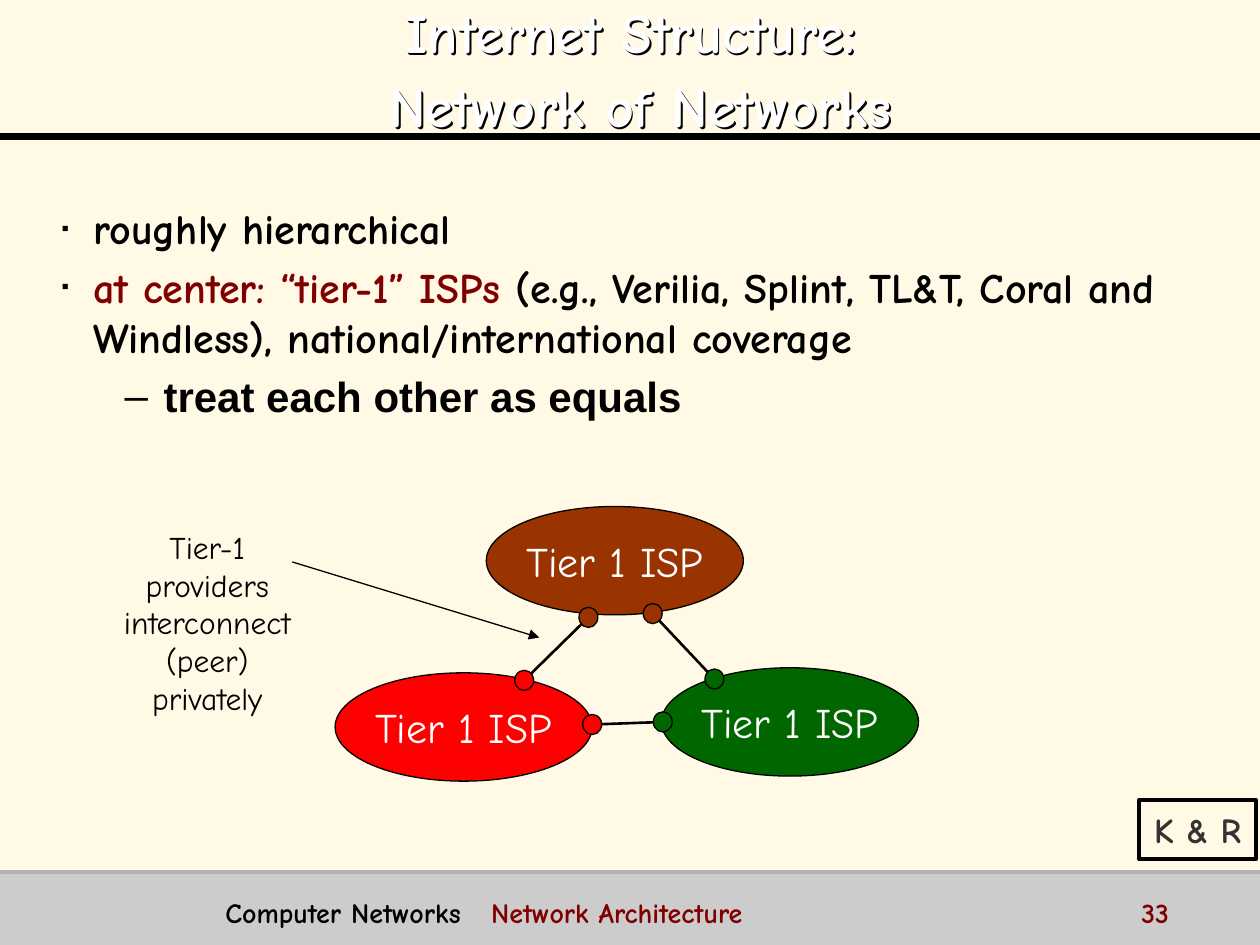
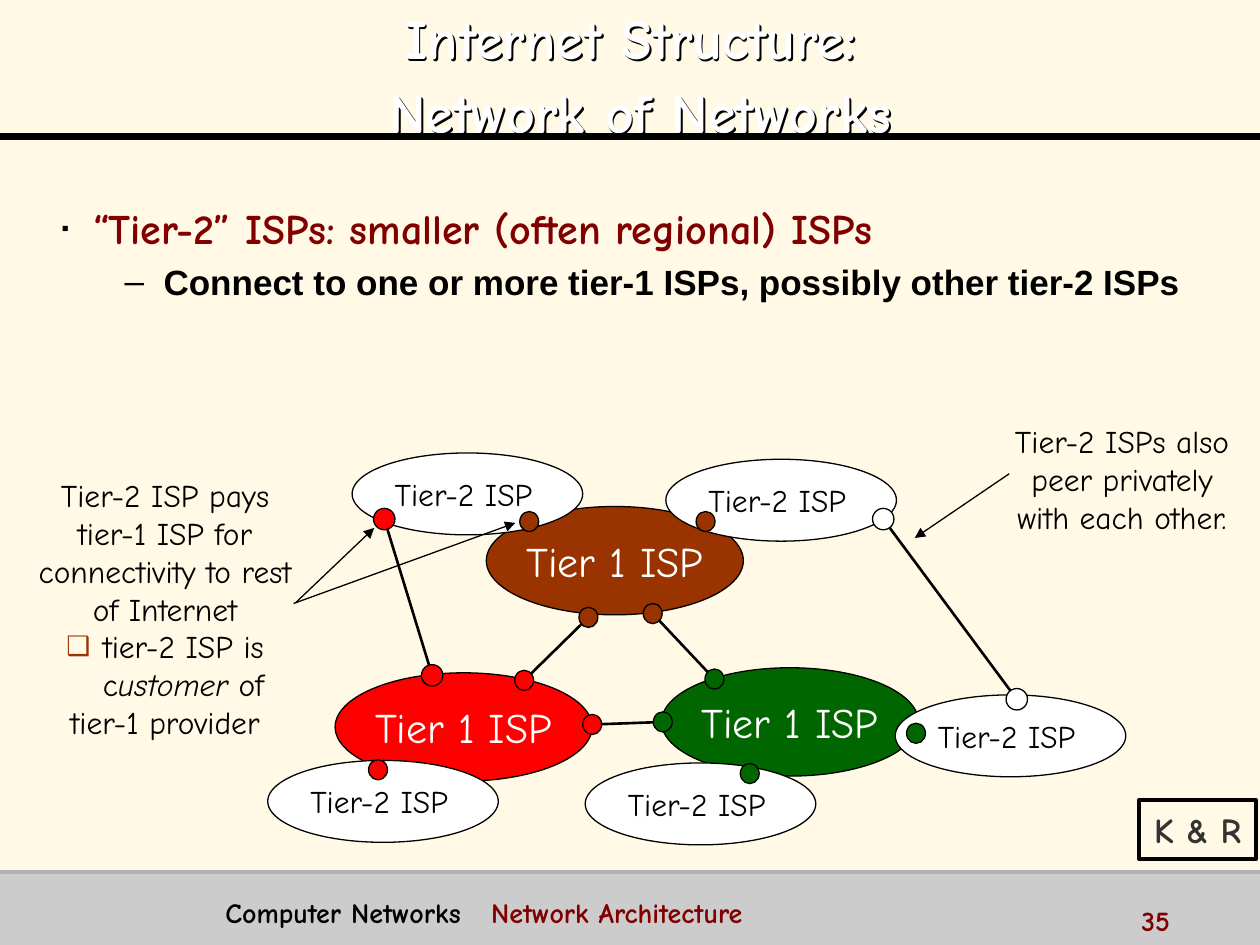
from lxml import etree
from pptx import Presentation, util as u
from pptx.dml.color import RGBColor
from pptx.enum import shapes, text
from pptx.oxml import ns

# Shared look
CREAM = RGBColor(0xFF, 0xF9, 0xE6)
GREY = RGBColor(0xCC, 0xCC, 0xCC)
RULE_GREY = RGBColor(0xB2, 0xB2, 0xB2)
DARK_GREY = RGBColor(0x33, 0x33, 0x33)
BLACK = RGBColor(0, 0, 0)
WHITE = RGBColor(0xFF, 0xFF, 0xFF)
MAROON = RGBColor(0x80, 0, 0)
RED = RGBColor(0xFF, 0, 0)
BROWN = RGBColor(0x99, 0x33, 0)
GREEN = RGBColor(0, 0x66, 0)
COMIC, SANS = "Comic Neue", "Arial"
WIDTH, HEIGHT = 10, 7.5
TITLE_RULE, FOOTER_TOP = 1.08, 6.92
TITLE_LINES = ["Internet Structure:", " Network of Networks"]
FOOTER = [("Computer Networks", BLACK), ("\tNetwork Architecture", MAROON)]
SOURCE = "K & R"

# Bullet levels: sign, sign size in percent, left margin, hanging indent, font
LEVELS = [("▪", 50, 0.25, 0.25, COMIC), ("–", 100, 0.81, 0.31, SANS)]

# Tier-1 core: clouds and ports as (centre x, centre y, colour), links as port pairs
TIER1_SIZE, TIER2_SIZE = (2.04, 0.86), (1.83, 0.65)
PORT_SIZE, WIDE_PORT_SIZE = (0.15, 0.16), (0.17, 0.17)
TIER1_CLOUDS = [(3.68, 5.77, RED), (4.88, 4.45, BROWN), (6.27, 5.73, GREEN)]
CORE_LINKS = [
    ((4.7, 5.75, RED), (5.26, 5.73, GREEN)),
    ((5.18, 4.87, BROWN), (5.67, 5.39, GREEN)),
    ((4.16, 5.4, RED), (4.67, 4.9, BROWN)),
]

# Tier-2 clouds, each with the port that joins it to the core
TIER2_CLOUDS = [
    ((6.2, 3.97), (5.6, 4.14, BROWN)),
    ((3.71, 3.92), (4.2, 4.14, BROWN)),
    ((3.04, 6.36), (3.0, 6.11, RED)),
    ((5.56, 6.38), (5.95, 6.14, GREEN)),
    ((8.02, 5.84), (7.27, 5.82, GREEN)),
]
TIER2_LINKS = [
    ((3.05, 4.12, RED), (3.43, 5.36, RED)),
    ((7.01, 4.12, WHITE), (8.07, 5.55, WHITE)),
]

# Slides: body is (level, size, spans); a note is (box, paragraphs, arrows),
# and its paragraphs are (has checkbox, [(text, italic)])
SLIDES = [
    {
        "number": "33", "number_top": 7.06,
        "title_box": (0.58, -0.11, 8.85, 1.25),
        "body_height": 5.08,
        "body": [
            (0, 24, [("roughly hierarchical", BLACK)]),
            (0, 24, [("at center: “tier-1” ISPs ", MAROON),
                     ("(e.g., Verilia, Splint, TL&T, Coral and Windless), "
                      "national/international coverage", BLACK)]),
            (1, 24, [("treat each other as equals", BLACK)]),
        ],
        "clouds": [], "links": [],
        "notes": [
            ((0.79, 4.14, 1.71, 1.6),
             [(False, [("Tier-1 providers interconnect (peer) privately", False)])],
             [((2.32, 4.46), (4.28, 5.06))]),
        ],
    },
    {
        "number": "35", "number_top": 7.12,
        "title_box": (0.2, 0.13, 9.61, 0.87),
        "body_height": 1,
        "body": [
            (0, 24, [("“Tier-2” ISPs: smaller (often regional) ISPs", MAROON)]),
            (1, 20, [("Connect to one or more tier-1 ISPs, possibly other tier-2 ISPs",
                      BLACK)]),
        ],
        "clouds": TIER2_CLOUDS, "links": TIER2_LINKS,
        "notes": [
            ((0.19, 3.73, 2.24, 2.2),
             [(False, [("Tier-2 ISP pays tier-1 ISP for connectivity to rest of Internet",
                        False)]),
              (True, [("tier-2 ISP is c", False), ("ustomer", True), (" of", False)]),
              (False, [("tier-1 provider", False)])],
             [((2.33, 4.79), (4.09, 4.15)), ((2.35, 4.78), (2.97, 4.19))]),
            ((7.92, 3.3, 1.97, 1.3),
             [(False, [("Tier-2 ISPs also peer privately with each other.", False)])],
             [((8.01, 3.76), (7.26, 4.27))]),
        ],
    },
]


# Text helpers
def inches(*lengths):
    return [u.Inches(length) for length in lengths]


def add_span(para, words, size, color, bold=False, italic=False, font=COMIC):
    span = para.add_run()
    span.text = words
    span.font.name, span.font.size = font, u.Pt(size)
    span.font.bold, span.font.italic = bold, italic
    span.font.color.rgb = color


def add_text_box(page, box):
    frame = page.shapes.add_textbox(*inches(*box)).text_frame
    frame.word_wrap = True
    return frame


def next_para(frame, index):
    return frame.add_paragraph() if index else frame.paragraphs[0]


def set_bullet(para, sign, percent, color, margin, hanging):
    props = para._p.get_or_add_pPr()
    props.set("marL", str(u.Inches(margin)))
    props.set("indent", str(-u.Inches(hanging)))
    paint = etree.SubElement(props, ns.qn("a:buClr"))
    etree.SubElement(paint, ns.qn("a:srgbClr"), val=str(color))
    etree.SubElement(props, ns.qn("a:buSzPct"), val=str(percent * 1000))
    etree.SubElement(props, ns.qn("a:buFont"), typeface=SANS)
    etree.SubElement(props, ns.qn("a:buChar"), char=sign)


def add_text_shadow(shape):
    # An unfilled shape passes its shadow on to its text
    shape.fill.background()
    effects = etree.SubElement(shape._element.spPr, ns.qn("a:effectLst"))
    shadow = etree.SubElement(effects, ns.qn("a:outerShdw"), blurRad="0",
                              dist=str(u.Pt(1.6)), dir="2700000",
                              algn="ctr", rotWithShape="0")
    etree.SubElement(shadow, ns.qn("a:srgbClr"), val=str(BLACK))


# Shape helpers
def add_shape(page, kind, box, fill=None, line=None, weight=0.75):
    shape = page.shapes.add_shape(kind, *inches(*box))
    shape.shadow.inherit = False
    if fill is None:
        shape.fill.background()
    else:
        shape.fill.solid()
        shape.fill.fore_color.rgb = fill
    if line is None:
        shape.line.fill.background()
    else:
        shape.line.color.rgb = line
        shape.line.width = u.Pt(weight)
    return shape


def label_shape(shape, words, size, color, bold=False, right_inset=0.1):
    frame = shape.text_frame
    frame.word_wrap = False
    frame.margin_right = u.Inches(right_inset)
    frame.vertical_anchor = text.MSO_ANCHOR.MIDDLE
    frame.paragraphs[0].alignment = text.PP_ALIGN.CENTER
    add_span(frame.paragraphs[0], words, size, color, bold)


def add_ellipse(page, center, size, fill):
    box = (center[0] - size[0] / 2, center[1] - size[1] / 2, *size)
    return add_shape(page, shapes.MSO_SHAPE.OVAL, box, fill, BLACK)


def add_line(page, start, end, weight, color=BLACK, arrow=False):
    line = page.shapes.add_connector(
        shapes.MSO_CONNECTOR.STRAIGHT, *inches(*start, *end))
    line.line.color.rgb = color
    line.line.width = u.Pt(weight)
    if arrow:
        etree.SubElement(line.line._get_or_add_ln(), ns.qn("a:tailEnd"), type="triangle")
    etree.SubElement(line._element.spPr, ns.qn("a:effectLst"))


def add_links(page, links, port_size):
    for start, end in links:
        add_line(page, start[:2], end[:2], 1.5)
        for x, y, color in (start, end):
            add_ellipse(page, (x, y), port_size, color)


# Parts of a slide
def add_frame(page, content):
    add_shape(page, shapes.MSO_SHAPE.RECTANGLE,
              (0, FOOTER_TOP, WIDTH, HEIGHT - FOOTER_TOP), GREY)
    add_line(page, (0, TITLE_RULE), (WIDTH, TITLE_RULE), 4)
    add_line(page, (0, FOOTER_TOP), (WIDTH, FOOTER_TOP), 2, RULE_GREY)

    source = add_shape(page, shapes.MSO_SHAPE.RECTANGLE, (9.04, 6.35, 0.93, 0.47),
                       line=BLACK, weight=2)
    label_shape(source, SOURCE, 20, DARK_GREY, bold=True)

    number = add_text_box(page, (8.96, content["number_top"], 1, 0.25))
    add_span(number.paragraphs[0], content["number"], 16, MAROON, bold=True)

    para = add_text_box(page, (1.69, 7.06, 7.12, 0.31)).paragraphs[0]
    tabs = etree.SubElement(para._p.get_or_add_pPr(), ns.qn("a:tabLst"))
    etree.SubElement(tabs, ns.qn("a:tab"), pos=str(u.Inches(2.11)), algn="l")
    for words, color in FOOTER:
        add_span(para, words, 16, color, bold=True)


def fill_title(page, box):
    title = page.shapes.title
    title.left, title.top, title.width, title.height = inches(*box)
    add_text_shadow(title)
    frame = title.text_frame
    frame.auto_size = text.MSO_AUTO_SIZE.NONE
    frame.vertical_anchor = text.MSO_ANCHOR.MIDDLE
    para = frame.paragraphs[0]
    para.alignment = text.PP_ALIGN.CENTER
    para.line_spacing = 1.1
    for index, words in enumerate(TITLE_LINES):
        if index:
            para.add_line_break()
        add_span(para, words, 32, WHITE, bold=True)


def add_body(page, lines, height):
    frame = add_text_box(page, (0.39, 1.56, 9.23, height))
    for index, (level, size, spans) in enumerate(lines):
        sign, percent, margin, hanging, font = LEVELS[level]
        para = next_para(frame, index)
        para.level = level
        set_bullet(para, sign, percent, BLACK, margin, hanging)
        if index:
            para.space_before = u.Pt(size * 0.2)
        for words, color in spans:
            add_span(para, words, size, color, bold=True, font=font)


def add_network(page, clouds, links):
    for x, y, color in TIER1_CLOUDS:
        label_shape(add_ellipse(page, (x, y), TIER1_SIZE, color), "Tier 1 ISP", 24, WHITE)
    add_links(page, CORE_LINKS, PORT_SIZE)
    for center, (x, y, color) in clouds:
        label_shape(add_ellipse(page, center, TIER2_SIZE, WHITE), "Tier-2 ISP", 18, BLACK,
                    right_inset=0.16)
        add_ellipse(page, (x, y), PORT_SIZE, color)
    add_links(page, links, WIDE_PORT_SIZE)


def add_note(page, box, paragraphs, arrows):
    frame = add_text_box(page, box)
    for index, (has_checkbox, spans) in enumerate(paragraphs):
        para = next_para(frame, index)
        para.alignment = text.PP_ALIGN.CENTER
        if has_checkbox:
            set_bullet(para, "❑", 85, BROWN, 0.29, 0.29)
        for words, italic in spans:
            add_span(para, words, 18, BLACK, italic=italic)
    for start, end in arrows:
        add_line(page, start, end, 0.75, arrow=True)


def main():
    deck = Presentation()
    deck.slide_width, deck.slide_height = inches(WIDTH, HEIGHT)
    deck.slide_master.background.fill.solid()
    deck.slide_master.background.fill.fore_color.rgb = CREAM
    title_only = deck.slide_layouts.get_by_name("Title Only")
    for content in SLIDES:
        page = deck.slides.add_slide(title_only)
        add_frame(page, content)
        fill_title(page, content["title_box"])
        add_body(page, content["body"], content["body_height"])
        add_network(page, content["clouds"], content["links"])
        for note in content["notes"]:
            add_note(page, *note)
    deck.save("out.pptx")


if __name__ == "__main__":
    main()
